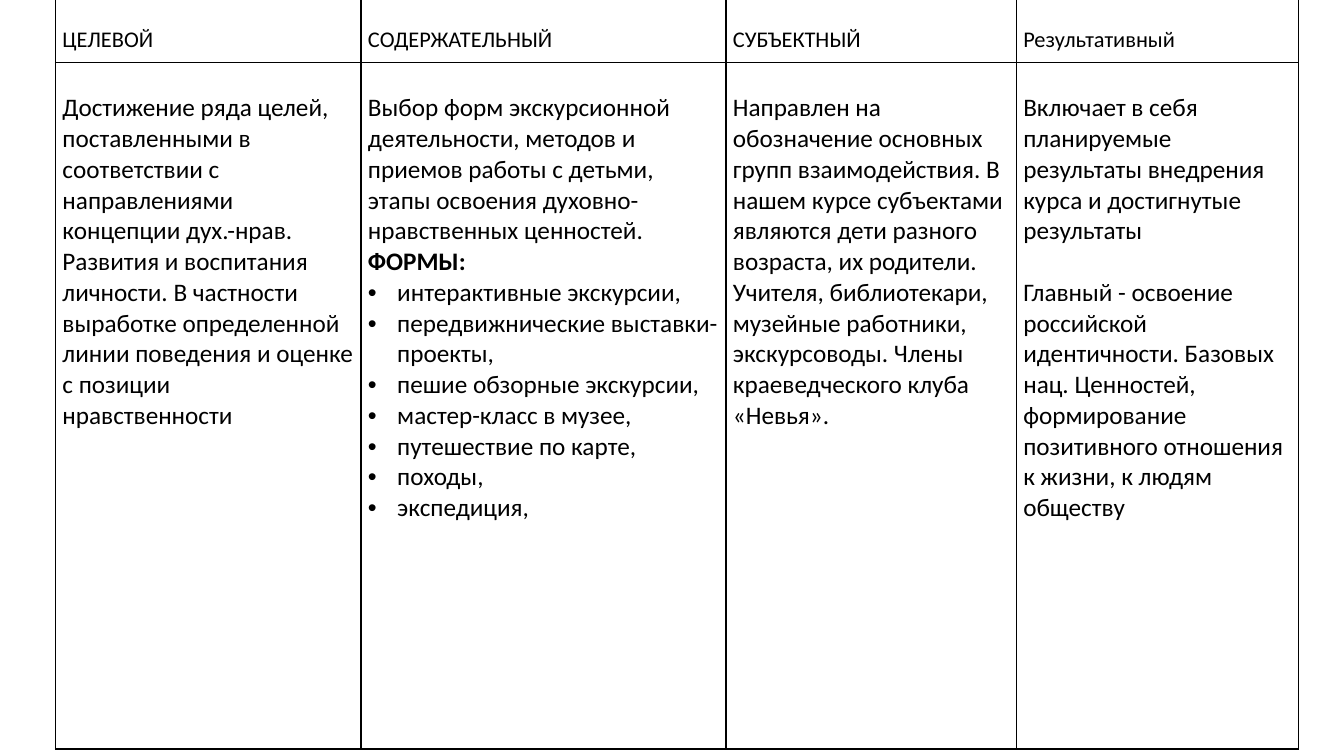
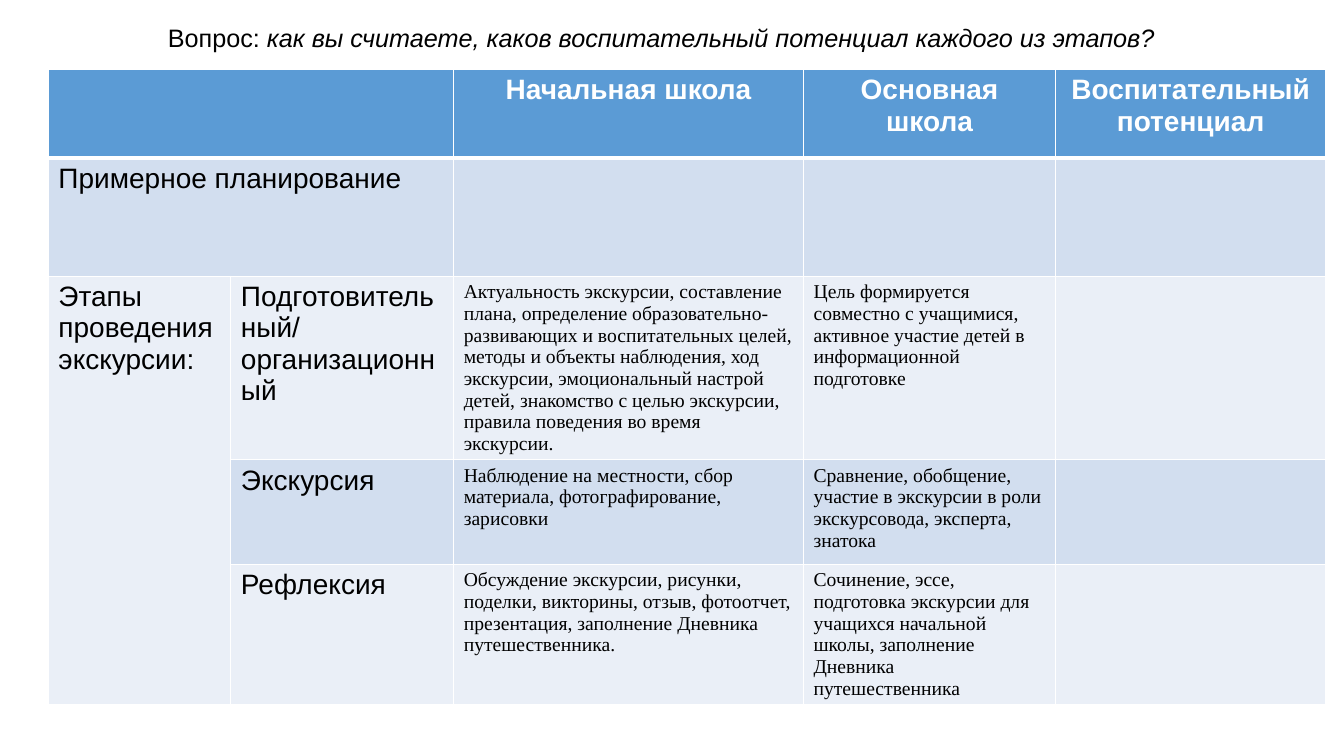
from pptx import Presentation
from pptx.dml.color import RGBColor
from pptx.enum.text import MSO_ANCHOR, MSO_AUTO_SIZE, PP_ALIGN
from pptx.util import Inches, Pt
from lxml.etree import SubElement
from pptx.oxml.ns import qn

BLACK = RGBColor(0x00, 0x00, 0x00)
WHITE = RGBColor(0xFF, 0xFF, 0xFF)
BLUE = RGBColor(0x5B, 0x9B, 0xD5)
BANDS = [RGBColor(0xEA, 0xEF, 0xF7), RGBColor(0xD2, 0xDE, 0xEF)]

HEAD = dict(name="Calibri", size=Pt(16), bold=False)
BODY = dict(HEAD, size=Pt(18))
STRONG = dict(BODY, bold=True)
STAGE = dict(name="Arial", size=Pt(20), bold=False)
TOP = dict(STAGE, bold=True)
NOTE = dict(name="Times New Roman", size=Pt(14), bold=False)
ASK = dict(name="Arial", size=Pt(18), bold=False)

PARTS = [
    ("ЦЕЛЕВОЙ", [
        "Достижение ряда целей, поставленными в соответствии с\vнаправлениями "
        "концепции дух.-нрав. Развития и воспитания личности. В частности "
        "выработке определенной линии поведения и оценке с позиции\vнравственности"]),
    ("СОДЕРЖАТЕЛЬНЫЙ", [
        "Выбор форм экскурсионной деятельности, методов и приемов работы с детьми,"
        "\vэтапы освоения духовно-нравственных ценностей."]),
    ("СУБЪЕКТНЫЙ", [
        "Направлен на обозначение основных групп взаимодействия. В нашем курсе "
        "субъектами являются дети разного возраста, их родители. Учителя, "
        "библиотекари, музейные работники, экскурсоводы. Члены краеведческого "
        "клуба «Невья»."]),
    ("Результативный", [
        "Включает в себя планируемые результаты внедрения курса и достигнутые результаты",
        "Главный - освоение российской идентичности. Базовых нац. Ценностей, "
        "формирование позитивного отношения к жизни, к людям обществу"]),
]
FORMS = ["интерактивные экскурсии,", "передвижнические выставки-проекты,",
         "пешие обзорные экскурсии,", "мастер-класс в музее,",
         "путешествие по карте,", "походы,", "экспедиция,"]

QUERY = [("Вопрос: ", False),
         ("как вы считаете, каков воспитательный потенциал каждого из этапов?", True)]
PLAN = [
    ["", "", "Начальная школа", "Основная школа", "Воспитательный потенциал"],
    ["Примерное планирование", "", "", "", ""],
    ["Этапы проведения экскурсии:", "Подготовительный/организационный",
     "Актуальность экскурсии, составление плана, определение "
     "образовательно-развивающих и воспитательных целей, методы и объекты "
     "наблюдения, ход экскурсии, эмоциональный настрой детей, знакомство с целью "
     "экскурсии, правила поведения во время экскурсии.",
     "Цель формируется совместно с учащимися, активное участие детей в "
     "информационной подготовке", ""],
    ["", "Экскурсия",
     "Наблюдение на местности, сбор материала, фотографирование, зарисовки",
     "Сравнение, обобщение, участие в экскурсии в роли экскурсовода, эксперта, знатока", ""],
    ["", "Рефлексия",
     "Обсуждение экскурсии, рисунки, поделки, викторины, отзыв, фотоотчет, "
     "презентация, заполнение Дневника путешественника.",
     "Сочинение, эссе, подготовка экскурсии для учащихся начальной школы, "
     "заполнение Дневника путешественника", ""],
]
SPANS = [((0, 0), (0, 1)), ((1, 0), (1, 1)), ((2, 0), (4, 0))]


def style(par, form, color=BLACK):
    for run in par.runs:
        for key, value in form.items():
            setattr(run.font, key, value)
        run.font.color.rgb = color


def write(frame, lines, form, color=BLACK):
    for i, line in enumerate(lines):
        par = frame.add_paragraph() if i else frame.paragraphs[0]
        par.text = line
        style(par, form, color)
    return par


def bullet(par):
    props = par._p.get_or_add_pPr()
    props.set("marL", str(Inches(0.29)))
    props.set("indent", str(-Inches(0.29)))
    SubElement(props, qn("a:buFont"), typeface="Arial")
    SubElement(props, qn("a:buChar"), char="•")


def border(cell, color, top=1, bottom=1):
    props = cell._tc.get_or_add_tcPr()
    for side, width in (("L", 1), ("R", 1), ("T", top), ("B", bottom)):
        line = SubElement(props, qn(f"a:ln{side}"), w=str(Pt(width)))
        fill = SubElement(line, qn("a:solidFill"))
        SubElement(fill, qn("a:srgbClr"), val=str(color))


def add_grid(slide, left, top, cols, rows):
    grid = slide.shapes.add_table(len(rows), len(cols), Inches(left), Inches(top),
                                  Inches(sum(cols)), Inches(sum(rows))).table
    grid.first_row = grid.horz_banding = False
    for col, width in zip(grid.columns, cols):
        col.width = Inches(width)
    for row, height in zip(grid.rows, rows):
        row.height = Inches(height)
    return grid


def add_parts(deck):
    slide = deck.slides.add_slide(deck.slide_layouts[6])
    grid = add_grid(slide, 0.55, -0.01, [3.03, 3.62, 2.88, 2.8], [0.63, 6.81])
    for c, (head, lines) in enumerate(PARTS):
        for r, (text, form, gap) in enumerate([([head], HEAD, 0.27), (lines, BODY, 0.3)]):
            cell = grid.cell(r, c)
            border(cell, BLACK)
            cell.fill.background()
            cell.margin_left = cell.margin_right = Inches(0.07)
            cell.margin_top, cell.margin_bottom = Inches(gap), 0
            last = write(cell.text_frame, text, form)
            if len(text) > 1:
                last.space_before = Pt(22)
    frame = grid.cell(1, 1).text_frame
    for i, text in enumerate(["ФОРМЫ:"] + FORMS):
        par = frame.add_paragraph()
        par.text = text
        style(par, BODY if i else STRONG)
        if i:
            bullet(par)


def add_plan(deck):
    slide = deck.slides.add_slide(deck.slide_layouts[5])
    title = slide.shapes.title
    title.left, title.top, title.width, title.height = map(Inches, (1.29, 0.17, 10.54, 0.4))
    frame = title.text_frame
    frame.auto_size = MSO_AUTO_SIZE.NONE
    frame.vertical_anchor = MSO_ANCHOR.MIDDLE
    par = frame.paragraphs[0]
    par.alignment = PP_ALIGN.CENTER
    for text, slant in QUERY:
        run = par.add_run()
        run.text = text
        run.font.italic = slant
    style(par, ASK)

    grid = add_grid(slide, 0.48, 0.69, [1.81, 2.21, 3.47, 2.5, 2.68],
                    [0.88, 1.17, 1.74, 1.04, 1.27])
    for start, end in SPANS:
        grid.cell(*start).merge(grid.cell(*end))
    for r, row in enumerate(PLAN):
        for c, text in enumerate(row):
            cell = grid.cell(r, c)
            if cell.is_spanned:
                continue
            border(cell, WHITE, 3 if r == 1 else 1, 1 if r else 3)
            cell.fill.solid()
            cell.fill.fore_color.rgb = BANDS[r % 2] if r else BLUE
            if not text:
                continue
            form = (STAGE if c < 2 else NOTE) if r else TOP
            par = write(cell.text_frame, [text], form, BLACK if r else WHITE)
            par.alignment = PP_ALIGN.LEFT if r else PP_ALIGN.CENTER


def main():
    deck = Presentation()
    deck.slide_width, deck.slide_height = Inches(13.33), Inches(7.5)
    add_parts(deck)
    add_plan(deck)
    deck.save("out.pptx")


if __name__ == "__main__":
    main()
